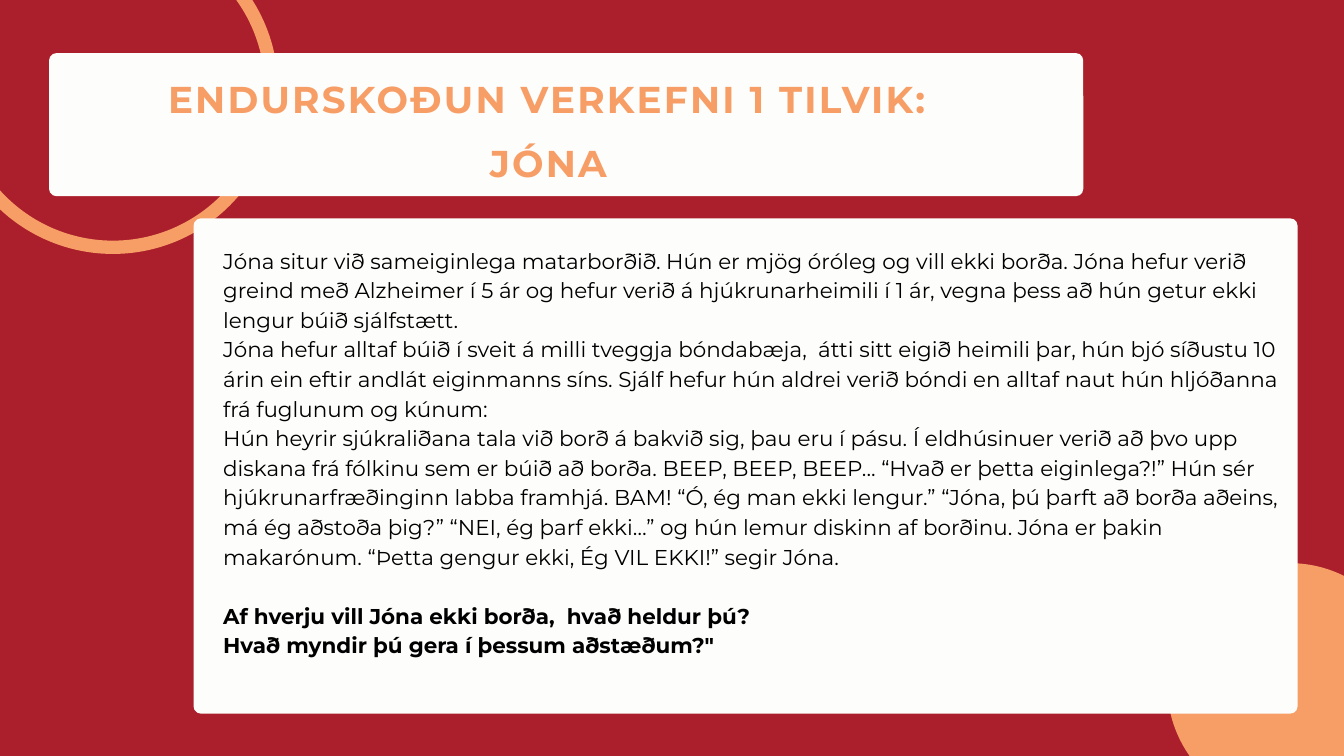
from dataclasses import dataclass

from pptx import Presentation
from pptx.dml.color import RGBColor as RGB
from pptx.enum.shapes import MSO_SHAPE as SHAPE
from pptx.enum.text import PP_ALIGN as ALIGN
from pptx.util import Pt

PX = 9144  # 100 px to the inch


@dataclass(frozen=True)
class Theme:
    red: RGB = RGB(0xAB, 0x1F, 0x2C)
    orange: RGB = RGB(0xF7, 0x9E, 0x67)
    card: RGB = RGB(0xFD, 0xFD, 0xFB)
    ink: RGB = RGB(0, 0, 0)
    font: str = "Montserrat"
    title_size: int = 40
    title_leading: int = 68
    title_tracking: int = 240
    body_size: int = 23
    body_leading: float = 31.7
    ring_width: float = 14.25
    radius: int = 11


THEME = Theme()

TITLE = "ENDURSKOÐUN VERKEFNI 1 TILVIK: JÓNA"
STORY = [
    "Jóna situr við sameiginlega matarborðið. Hún er mjög óróleg og vill ekki borða. "
    "Jóna hefur verið greind með Alzheimer í 5 ár og hefur verið á hjúkrunarheimili í 1 ár, "
    "vegna þess að hún getur ekki lengur búið sjálfstætt.",
    "Jóna hefur alltaf búið í sveit á milli tveggja bóndabæja,  átti sitt eigið heimili þar, "
    "hún bjó síðustu 10 árin ein eftir andlát eiginmanns síns. Sjálf hefur hún aldrei verið "
    "bóndi en alltaf naut hún hljóðanna frá fuglunum og kúnum:",
    "Hún heyrir sjúkraliðana tala við borð á bakvið sig, þau eru í pásu. Í eldhúsinuer verið "
    "að þvo upp diskana frá fólkinu sem er búið að borða. BEEP, BEEP, BEEP... “Hvað er þetta "
    "eiginlega?!” Hún sér hjúkrunarfræðinginn labba framhjá. BAM! “Ó, ég man ekki lengur.” "
    "“Jóna, þú þarft að borða aðeins, má ég aðstoða þig?” “NEI, ég þarf ekki…” og hún lemur "
    "diskinn af borðinu. Jóna er þakin makarónum. “Þetta gengur ekki, Ég VIL EKKI!” segir Jóna.",
]
QUESTIONS = [
    "Af hverju vill Jóna ekki borða,  hvað heldur þú?",
    "Hvað myndir þú gera í þessum aðstæðum?\"",
]


def set_attrs(obj, values):
    for name, value in values.items():
        setattr(obj, name, value)


def add_shape(slide, kind, box, fill=None, line=None):
    sp = slide.shapes.add_shape(kind, *(v * PX for v in box))
    sp.shadow.inherit = False
    if fill is None:
        sp.fill.background()
    else:
        sp.fill.solid()
        sp.fill.fore_color.rgb = fill
    if line is None:
        sp.line.fill.background()
    else:
        sp.line.color.rgb = line
        sp.line.width = Pt(THEME.ring_width)
    return sp


def add_card(slide, box):
    sp = add_shape(slide, SHAPE.ROUNDED_RECTANGLE, box, fill=THEME.card)
    sp.adjustments[0] = THEME.radius / min(box[2:])


def add_text_frame(slide, box):
    tf = slide.shapes.add_textbox(*(v * PX for v in box)).text_frame
    set_attrs(tf, dict(word_wrap=True, margin_left=0, margin_top=0,
                       margin_right=0, margin_bottom=0))
    return tf


def add_run(p, text, size, color, bold=False):
    r = p.add_run()
    r.text = text
    set_attrs(r.font, dict(name=THEME.font, size=Pt(size), bold=bold))
    r.font.color.rgb = color
    return r


def title_card(slide, box):
    x, y, w, _ = box
    add_card(slide, box)
    p = add_text_frame(slide, (x + 93, y + 7, w - 239, 180)).paragraphs[0]
    set_attrs(p, dict(alignment=ALIGN.CENTER, line_spacing=Pt(THEME.title_leading)))
    r = add_run(p, TITLE, THEME.title_size, THEME.orange, bold=True)
    r.font._element.set("spc", str(THEME.title_tracking))


def story_card(slide, box):
    x, y, w, h = box
    add_card(slide, box)
    tf = add_text_frame(slide, (x + 44, y + 38, w - 64, h - 39))
    lines = [(t, False) for t in STORY] + [(t, True) for t in QUESTIONS]
    for i, (text, bold) in enumerate(lines):
        p = tf.add_paragraph() if i else tf.paragraphs[0]
        p.line_spacing = Pt(THEME.body_leading)
        if i == len(STORY):
            p.space_before = Pt(THEME.body_leading)
        add_run(p, text, THEME.body_size, THEME.ink, bold)


def backdrop(slide, ring_box, disc_box):
    bg = slide.background.fill
    bg.solid()
    bg.fore_color.rgb = THEME.red
    add_shape(slide, SHAPE.OVAL, ring_box, line=THEME.orange)
    add_shape(slide, SHAPE.OVAL, disc_box, fill=THEME.orange)


def main():
    prs = Presentation()
    set_attrs(prs, dict(slide_width=2000 * PX, slide_height=1125 * PX))
    slide = prs.slides.add_slide(prs.slide_layouts[6])
    backdrop(slide, (-68, -104, 472, 472), (1737, 838, 364, 364))
    story_card(slide, (288, 325, 1643, 737))
    title_card(slide, (73, 79, 1539, 213))
    prs.save("out.pptx")


if __name__ == "__main__":
    main()
